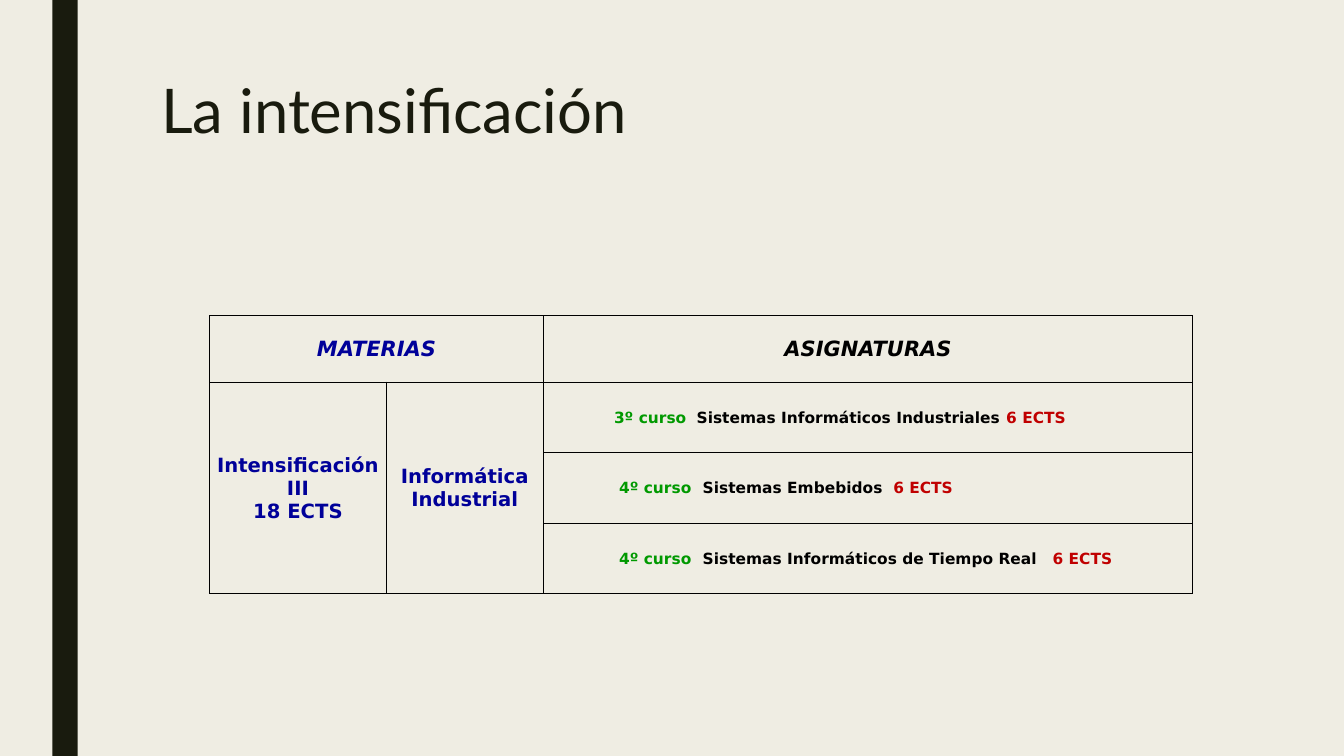
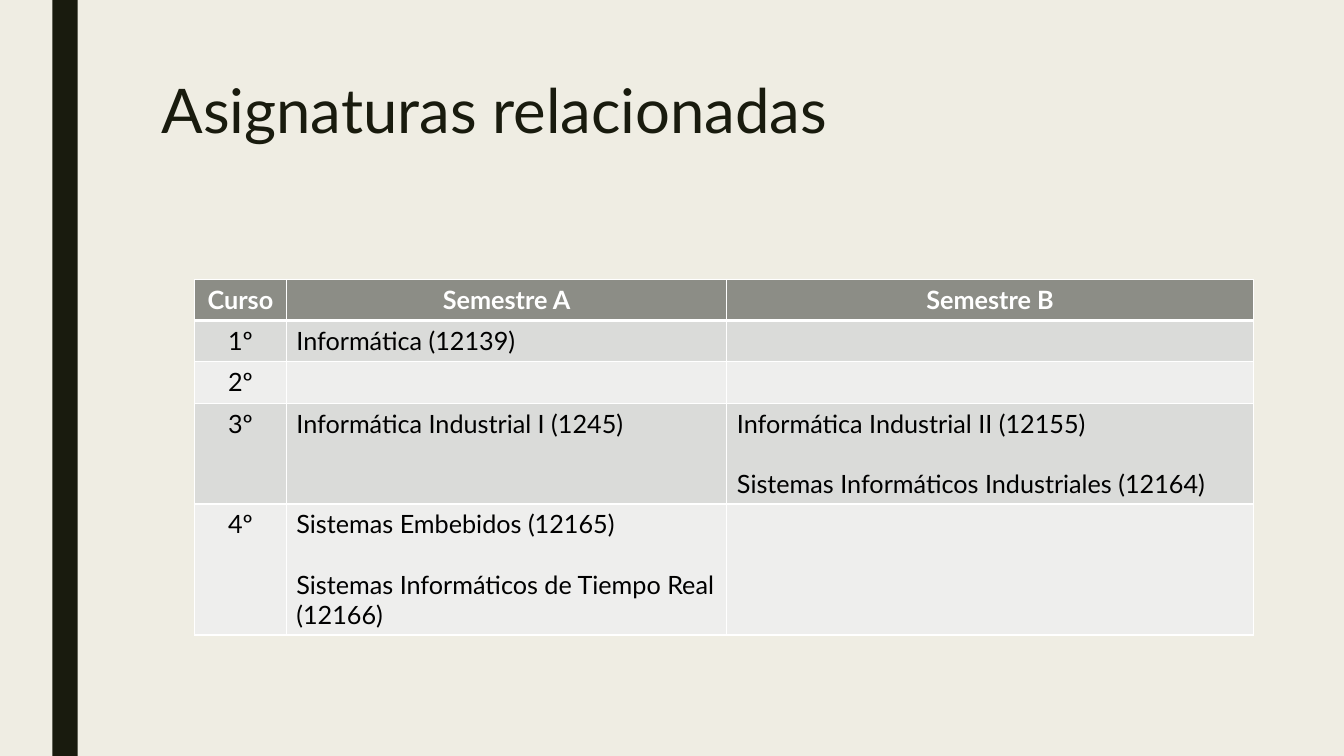
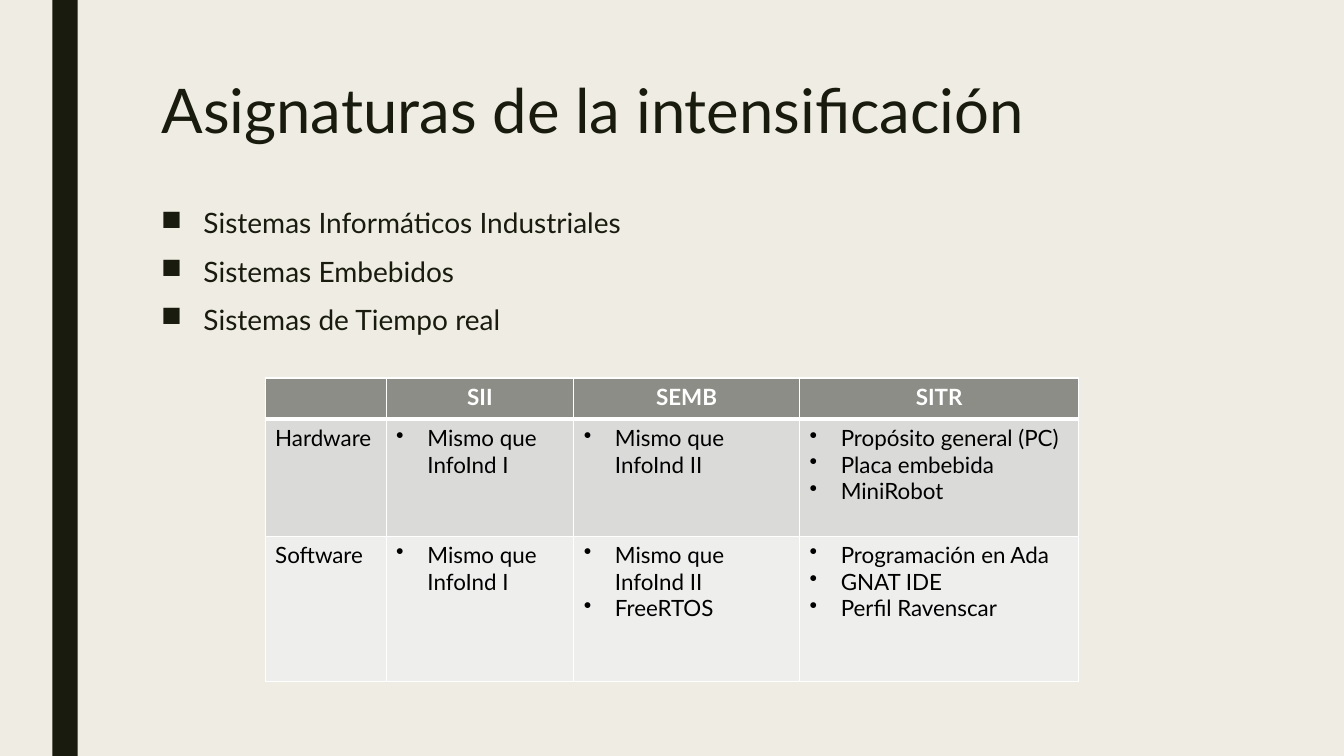
from dataclasses import dataclass
from typing import Any, Optional

from lxml import etree
from pptx import Presentation
from pptx import util as u
from pptx.dml.color import RGBColor
from pptx.enum import shapes, text
from pptx.oxml import ns

# Shared look
INK, PAPER, BLACK, WHITE = "191B0E", "EFEDE3", "000000", "FFFFFF"
HEADER, DARK_BAND, LIGHT_BAND = "8C8D86", "DADBD9", "EEEEED"
NAVY, GREEN, RED = "000099", "009900", "C00000"
LATO, DEJAVU = "Lato", "DejaVu Sans"
CENTER, LEFT = text.PP_ALIGN.CENTER, text.PP_ALIGN.LEFT
TITLE_ONLY = 5


@dataclass(frozen=True)
class Style:
    size: float
    color: str = BLACK
    name: str = LATO
    bold: bool = False
    italic: bool = False


@dataclass(frozen=True)
class Line:
    runs: tuple[tuple[str, Style], ...]
    align: Any = LEFT
    bullet: str = ""
    indent: float = 0
    tabs: tuple[float, ...] = ()
    before: float = 0
    after: float = 0
    spacing: Optional[float] = None


@dataclass(frozen=True)
class Grid:
    left: float
    top: float
    columns: tuple[float, ...]
    rows: tuple[float, ...]
    cells: list[list[list[Line]]]
    fills: tuple[Optional[str], ...]
    border: str = WHITE
    border_width: float = 1
    header_rule: float = 3
    margins: tuple[float, float, float, float] = (0.1, 0.05, 0.1, 0.05)
    anchor: Any = text.MSO_ANCHOR.TOP
    merges: tuple[tuple[int, int, int, int], ...] = ()


def rgb(color: str) -> RGBColor:
    return RGBColor.from_string(color)


def assign(target: Any, values: dict[str, Any]) -> None:
    for name, value in values.items():
        setattr(target, name, value)


def add_element(parent: Any, tag: str, **attributes: Any) -> Any:
    values = {name: str(value) for name, value in attributes.items()}
    return etree.SubElement(parent, ns.qn(tag), values)


def write_lines(frame: Any, lines: list[Line]) -> None:
    for index, line in enumerate(lines):
        paragraph = frame.add_paragraph() if index else frame.paragraphs[0]
        properties = paragraph._p.get_or_add_pPr()
        if line.bullet:
            indent = u.Inches(line.indent)
            properties.set("marL", str(indent))
            properties.set("indent", str(-indent))
            add_element(properties, "a:buChar", char=line.bullet)
        if line.tabs:
            stops = add_element(properties, "a:tabLst")
            for stop in line.tabs:
                add_element(stops, "a:tab", pos=u.Inches(stop), algn="l")
        assign(paragraph, {
            "alignment": line.align,
            "line_spacing": line.spacing,
            "space_before": u.Pt(line.before if index else 0),
            "space_after": u.Pt(line.after),
        })
        for words, style in line.runs:
            run = paragraph.add_run()
            run.text = words
            assign(run.font, {"size": u.Pt(style.size), "name": style.name,
                              "bold": style.bold, "italic": style.italic})
            run.font.color.rgb = rgb(style.color)


def set_borders(cell: Any, color: str, widths: dict[str, float]) -> None:
    properties = cell._tc.get_or_add_tcPr()
    for side, width in widths.items():
        border = add_element(properties, f"a:ln{side}", w=u.Pt(width))
        fill = add_element(border, "a:solidFill")
        add_element(fill, "a:srgbClr", val=color)


def add_grid(slide: Any, grid: Grid) -> None:
    frame = slide.shapes.add_table(
        len(grid.rows), len(grid.columns), u.Inches(grid.left), u.Inches(grid.top),
        u.Inches(sum(grid.columns)), u.Inches(sum(grid.rows)))
    table = frame.table
    assign(table, {"first_row": False, "horz_banding": False})
    for column, width in zip(table.columns, grid.columns):
        column.width = u.Inches(width)
    for row, height in zip(table.rows, grid.rows):
        row.height = u.Inches(height)
    sides = ("margin_left", "margin_top", "margin_right", "margin_bottom")
    margins = {side: u.Inches(value) for side, value in zip(sides, grid.margins)}
    thin = grid.border_width
    for row_index, row in enumerate(grid.cells):
        top = grid.header_rule if row_index == 1 else thin
        bottom = grid.header_rule if row_index == 0 else thin
        fill = grid.fills[row_index]
        for column_index, lines in enumerate(row):
            cell = table.cell(row_index, column_index)
            assign(cell, margins | {"vertical_anchor": grid.anchor})
            set_borders(cell, grid.border, {"L": thin, "R": thin, "T": top, "B": bottom})
            if fill:
                cell.fill.solid()
                cell.fill.fore_color.rgb = rgb(fill)
            else:
                cell.fill.background()
            write_lines(cell.text_frame, lines)
    for first_row, first_column, last_row, last_column in grid.merges:
        table.cell(first_row, first_column).merge(table.cell(last_row, last_column))


def add_slide(presentation: Any, title: str) -> Any:
    slide = presentation.slides.add_slide(presentation.slide_layouts[TITLE_ONLY])
    # Side band
    band = slide.shapes.add_shape(shapes.MSO_SHAPE.RECTANGLE, u.Inches(0.52), 0,
                                  u.Inches(0.25), presentation.slide_height)
    band.shadow.inherit = False
    band.fill.solid()
    band.fill.fore_color.rgb = rgb(INK)
    band.line.fill.background()
    # Title
    heading = slide.shapes.title
    assign(heading, {"left": u.Inches(1.5), "top": u.Inches(0.75),
                     "width": u.Inches(10.5), "height": u.Inches(1.62)})
    assign(heading.text_frame, {"word_wrap": True, "auto_size": text.MSO_AUTO_SIZE.NONE,
                                "vertical_anchor": text.MSO_ANCHOR.TOP})
    write_lines(heading.text_frame, [Line(((title, Style(44, INK)),), spacing=0.89)])
    return slide


def centered(words: str, style: Style) -> Line:
    return Line(((words, style),), CENTER)


def add_specialization(presentation: Any) -> None:
    slide = add_slide(presentation, "La intensificación")
    heading = Style(15, BLACK, DEJAVU, True, True)
    subject = Style(14, NAVY, DEJAVU, True)
    year, course, credits = (Style(11, color, DEJAVU, True)
                             for color in (GREEN, BLACK, RED))

    def course_line(when: str, name: str, tabs: tuple[float, ...]) -> list[Line]:
        return [Line((("\t" + when, year), ("\t" + name, course),
                      ("\t6 ECTS", credits)), tabs=tabs)]

    cells = [
        [[centered("MATERIAS", Style(15, NAVY, DEJAVU, True, True))], [],
         [centered("ASIGNATURAS", heading)]],
        [[centered("Intensificación III", subject), centered("18 ECTS", subject)],
         [centered("Informática Industrial", subject)],
         course_line("3º curso", "Sistemas Informáticos Industriales", (0.69, 1.51, 4.58))],
        [[], [], course_line("4º curso", "Sistemas Embebidos", (0.74, 1.57, 3.46))],
        [[], [], course_line("4º curso", "Sistemas Informáticos de Tiempo Real",
                             (0.74, 1.57, 5.04))],
    ]
    add_grid(slide, Grid(
        2.08, 3.13, (1.75, 1.56, 6.44), (0.66, 0.7, 0.7, 0.7), cells, (None,) * 4,
        border=BLACK, border_width=0.5, header_rule=0.5, margins=(0.01, 0.01, 0.01, 0),
        anchor=text.MSO_ANCHOR.MIDDLE, merges=((0, 0, 0, 1), (1, 0, 3, 0), (1, 1, 3, 1))))


def add_related_courses(presentation: Any) -> None:
    slide = add_slide(presentation, "Asignaturas relacionadas")
    head, body = Style(18, WHITE, bold=True), Style(18)
    semesters = [
        ("1º", ["Informática (12139)"], []),
        ("2º", [], []),
        ("3º", ["Informática Industrial I (1245)"],
         ["Informática Industrial II (12155)", "Sistemas Informáticos Industriales (12164)"]),
        ("4º", ["Sistemas Embebidos (12165)", "Sistemas Informáticos de Tiempo Real (12166)"],
         []),
    ]
    cells = [[[centered(name, head)] for name in ("Curso", "Semestre A", "Semestre B")]]
    for year, *courses in semesters:
        cells.append([[centered(year, body)]] + [
            [Line(((name, body),), before=21.5) for name in names] for names in courses])
    add_grid(slide, Grid(
        1.93, 2.77, (0.91, 4.37, 5.22), (0.41, 0.41, 0.41, 1, 1.3), cells,
        (HEADER, DARK_BAND, LIGHT_BAND, DARK_BAND, LIGHT_BAND)))


def add_specialization_courses(presentation: Any) -> None:
    slide = add_slide(presentation, "Asignaturas de la intensificación")
    # Course list
    box = slide.shapes.add_textbox(u.Inches(1.5), u.Inches(2.02),
                                   u.Inches(10.5), u.Inches(1.6))
    box.text_frame.word_wrap = True
    courses = ("Sistemas Informáticos Industriales", "Sistemas Embebidos",
               "Sistemas de Tiempo real")
    write_lines(box.text_frame, [
        Line(((name, Style(20, INK)),), bullet="■", indent=0.42,
             before=10, after=2, spacing=0.94) for name in courses])
    # Tools by course
    head, body = Style(16, WHITE, bold=True), Style(16)
    tools = [
        ("Hardware", ["Mismo que InfoInd I"], ["Mismo que InfoInd II"],
         ["Propósito general (PC)", "Placa embebida", "MiniRobot"]),
        ("Software", ["Mismo que InfoInd I"], ["Mismo que InfoInd II", "FreeRTOS"],
         ["Programación en Ada", "GNAT IDE", "Perfil Ravenscar"]),
    ]
    cells = [[[]] + [[centered(name, head)] for name in ("SII", "SEMB", "SITR")]]
    for kind, *items in tools:
        cells.append([[Line(((kind, body),))]] + [
            [Line(((name, body),), bullet="•", indent=0.31) for name in names]
            for names in items])
    add_grid(slide, Grid(
        2.63, 3.75, (1.2, 1.86, 2.24, 2.77), (0.41, 1.16, 1.44), cells,
        (HEADER, DARK_BAND, LIGHT_BAND)))


def main() -> None:
    presentation = Presentation()
    assign(presentation, {"slide_width": u.Inches(13.33), "slide_height": u.Inches(7.5)})
    background = presentation.slide_master.background.fill
    background.solid()
    background.fore_color.rgb = rgb(PAPER)
    add_specialization(presentation)
    add_related_courses(presentation)
    add_specialization_courses(presentation)
    presentation.save("out.pptx")


if __name__ == "__main__":
    main()
